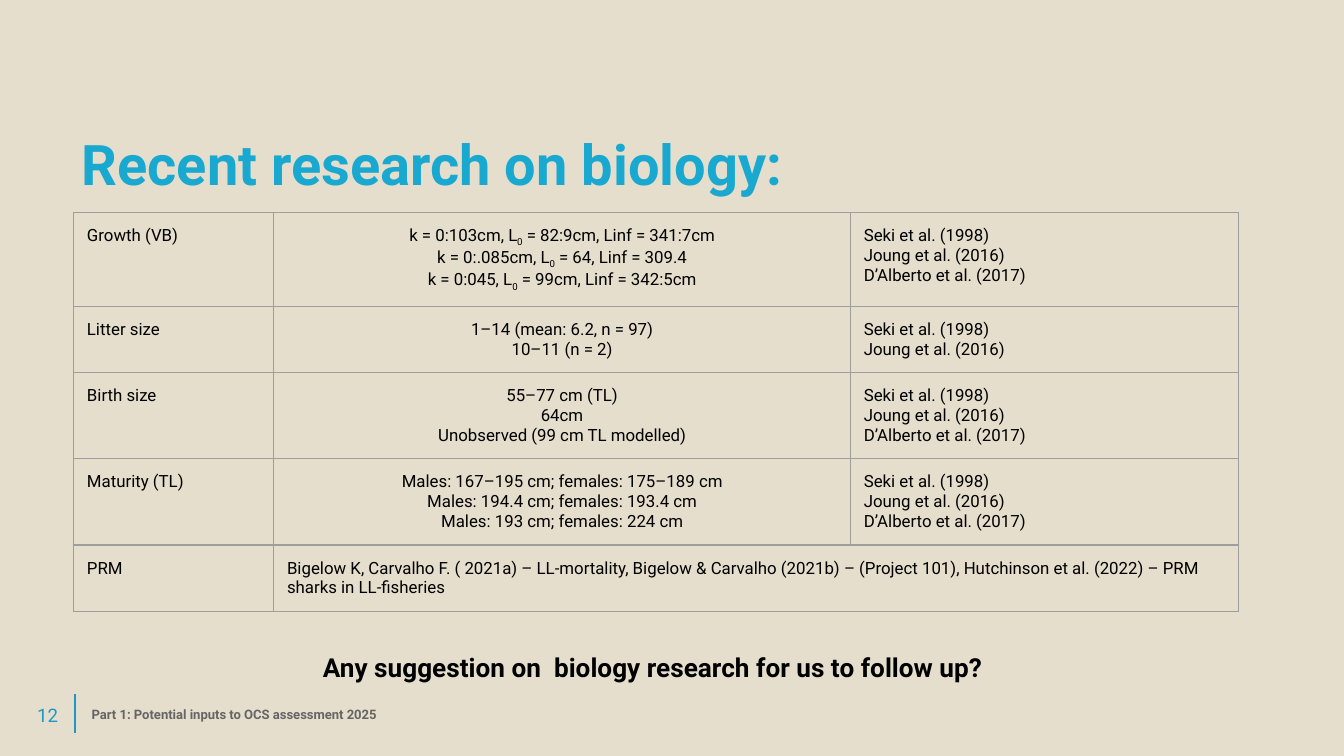
"""Build the slide on recent biology research for the stock assessment."""
import lxml.etree
import pptx
import pptx.dml.color
import pptx.enum.shapes
import pptx.enum.text
import pptx.oxml.ns
import pptx.util

Pt = pptx.util.Pt
RGBColor = pptx.dml.color.RGBColor
Align = pptx.enum.text.PP_ALIGN
Anchor = pptx.enum.text.MSO_ANCHOR
qn = pptx.oxml.ns.qn

FONT = "Roboto"
SAND = RGBColor(0xE5, 0xDE, 0xCC)
TITLE_BLUE = RGBColor(0x19, 0xA9, 0xD0)
ACCENT_BLUE = RGBColor(0x1D, 0x98, 0xC4)
BLACK = RGBColor(0x00, 0x00, 0x00)
FOOTER_GREY = RGBColor(0x65, 0x65, 0x65)
BORDER_GREY = RGBColor(0x9E, 0x9E, 0x9E)

INSET = Pt(7.2)
COLUMN_WIDTHS = (107.2, 309, 208)
ROW_HEIGHTS = (50.3, 35.4, 46, 46, 35.4)
SUBSCRIPT_MARK = "_0"

SEKI_JOUNG = ["Seki et al. (1998)", "Joung et al. (2016)"]
ALL_STUDIES = SEKI_JOUNG + ["D’Alberto et al. (2017)"]
BIOLOGY_ROWS = [
    (["Growth (VB)"],
     ["k = 0:103cm, L_0 = 82:9cm, Linf = 341:7cm",
      "k = 0:.085cm, L_0 = 64, Linf = 309.4",
      "k = 0:045, L_0 = 99cm, Linf = 342:5cm"],
     ALL_STUDIES),
    (["Litter size"], ["1–14 (mean: 6.2, n = 97)", "10–11 (n = 2)"], SEKI_JOUNG),
    (["Birth size"],
     ["55–77 cm (TL)", "64cm", "Unobserved (99 cm TL modelled)"],
     ALL_STUDIES),
    (["Maturity (TL)"],
     ["Males: 167–195 cm; females: 175–189 cm",
      "Males: 194.4 cm; females: 193.4 cm",
      "Males: 193 cm; females: 224 cm"],
     ALL_STUDIES),
    (["PRM"],
     ["Bigelow K, Carvalho F. ( 2021a) – LL-mortality, Bigelow & Carvalho (2021b) – "
      "(Project 101), Hutchinson et al. (2022) – PRM sharks in LL-fisheries"]),
]


def style_paragraph(paragraph, size, color, bold=False, align=Align.LEFT, spacing=1.0):
    """Set the font, alignment and line spacing of a paragraph."""
    paragraph.alignment = align
    paragraph.line_spacing = spacing
    paragraph.space_before = Pt(0)
    font = paragraph.font
    font.name, font.size, font.bold = FONT, Pt(size), bold
    font.color.rgb = color


def set_insets(holder):
    """Give a text frame or table cell equal margins."""
    holder.margin_left = holder.margin_right = INSET
    holder.margin_top = holder.margin_bottom = INSET


def fill_text(shape, box, text, anchor=Anchor.TOP, **style):
    """Place a shape and write one styled paragraph in it."""
    shape.left, shape.top, shape.width, shape.height = map(Pt, box)
    frame = shape.text_frame
    frame.word_wrap = True
    frame.auto_size = pptx.enum.text.MSO_AUTO_SIZE.NONE
    frame.vertical_anchor = anchor
    set_insets(frame)
    frame.text = text
    style_paragraph(frame.paragraphs[0], **style)


def add_text(slide, box, text, **style):
    """Add a text box with one styled paragraph."""
    shape = slide.shapes.add_textbox(*map(Pt, box))
    fill_text(shape, box, text, **style)


def add_rule(slide, x, top, bottom):
    """Add the vertical line beside the slide number."""
    rule = slide.shapes.add_connector(
        pptx.enum.shapes.MSO_CONNECTOR.STRAIGHT, Pt(x), Pt(top), Pt(x), Pt(bottom))
    rule.line.color.rgb = ACCENT_BLUE
    rule.line.width = Pt(0.75)
    lxml.etree.SubElement(rule._element.spPr, qn("a:effectLst"))


def add_borders(cell):
    """Draw a thin grey line on all four sides of a cell."""
    properties = cell._tc.get_or_add_tcPr()
    for position, side in enumerate(("a:lnL", "a:lnR", "a:lnT", "a:lnB")):
        line = lxml.etree.Element(qn(side), w=str(Pt(0.75)))
        fill = lxml.etree.SubElement(line, qn("a:solidFill"))
        lxml.etree.SubElement(fill, qn("a:srgbClr"), val=str(BORDER_GREY))
        properties.insert(position, line)


def write_line(paragraph, line):
    """Write a line, setting a marked zero as a subscript."""
    before, mark, after = line.partition(SUBSCRIPT_MARK)
    paragraph.add_run().text = before
    if mark:
        subscript = paragraph.add_run()
        subscript.text = "0"
        subscript._r.get_or_add_rPr().set("baseline", "-25000")
        paragraph.add_run().text = after


def fill_cell(cell, lines, align):
    """Write the lines of a table cell, one paragraph each."""
    frame = cell.text_frame
    for index, line in enumerate(lines):
        paragraph = frame.add_paragraph() if index else frame.paragraphs[0]
        write_line(paragraph, line)
        style_paragraph(paragraph, 9, BLACK, align=align)


def add_biology_table(slide, left, top):
    """Add the table of biological parameters and their studies."""
    frame = slide.shapes.add_table(
        len(ROW_HEIGHTS), len(COLUMN_WIDTHS), Pt(left), Pt(top),
        Pt(sum(COLUMN_WIDTHS)), Pt(sum(ROW_HEIGHTS)))
    table = frame.table
    table.first_row = table.horz_banding = False
    for column, width in zip(table.columns, COLUMN_WIDTHS):
        column.width = Pt(width)
    for row, height in zip(table.rows, ROW_HEIGHTS):
        row.height = Pt(height)
    for cell in table.iter_cells():
        cell.fill.background()
        set_insets(cell)
        add_borders(cell)
    for row, contents in zip(table.rows, BIOLOGY_ROWS):
        is_full = len(contents) == len(COLUMN_WIDTHS)
        if not is_full:
            row.cells[1].merge(row.cells[2])
        for index, lines in enumerate(contents):
            align = Align.CENTER if is_full and index == 1 else Align.LEFT
            fill_cell(row.cells[index], lines, align)


def main():
    """Build and save the presentation."""
    presentation = pptx.Presentation()
    presentation.slide_width, presentation.slide_height = Pt(720), Pt(405)
    slide = presentation.slides.add_slide(presentation.slide_layouts[5])
    slide.background.fill.solid()
    slide.background.fill.fore_color.rgb = SAND

    add_rule(slide, 40.2, 372, 392.6)
    add_text(slide, (2.2, 369, 36, 28), "12", anchor=Anchor.MIDDLE,
             size=10, color=ACCENT_BLUE, align=Align.RIGHT)
    fill_text(slide.shapes.title, (36.6, 66.2, 630, 48.2), "Recent research on biology:",
              size=30, color=TITLE_BLUE, bold=True, spacing=0.9)
    add_biology_table(slide, 39.4, 113.8)
    add_text(slide, (39.4, 333.4, 624.2, 31.7),
             "Any suggestion on  biology research for us to follow up? ",
             size=14, color=BLACK, bold=True, align=Align.CENTER, spacing=1.5)
    add_text(slide, (42, 372.2, 217.4, 21.6),
             "Part 1: Potential inputs to OCS assessment 2025",
             size=7, color=FOOTER_GREY, bold=True, spacing=0.9)
    presentation.save("out.pptx")


if __name__ == "__main__":
    main()
